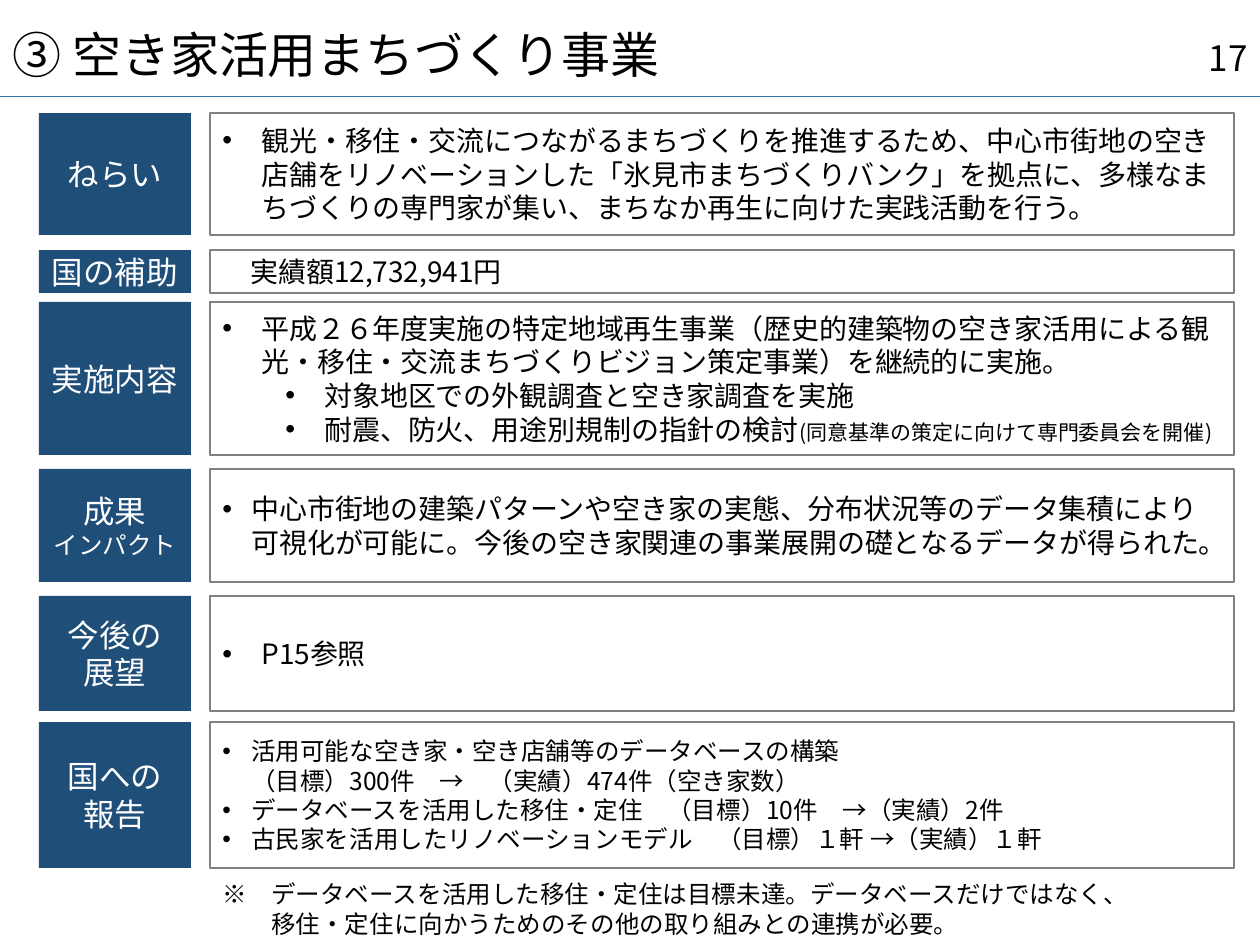
from dataclasses import dataclass

from lxml.etree import SubElement
from pptx import Presentation
from pptx.dml.color import RGBColor
from pptx.enum.shapes import MSO_CONNECTOR, MSO_SHAPE
from pptx.enum.text import MSO_ANCHOR, PP_ALIGN
from pptx.oxml.ns import qn
from pptx.util import Pt


@dataclass(frozen=True)
class Theme:
    face: str = "Noto Sans CJK JP"
    ink: str = "000000"
    paper: str = "FFFFFF"
    navy: str = "1F4E79"
    gray: str = "808080"
    blue: str = "2E75B6"
    title: int = 28
    page: int = 20
    label: int = 18
    body: int = 16
    small: int = 14
    tiny: int = 12


@dataclass(frozen=True)
class Para:
    text: str
    size: int
    left: int = 0
    hang: int = 0
    level: int = 0
    mark: bool = True
    tail: str = ""


def emu(px):
    return round(px * 914400 / 126)


def color(code):
    return RGBColor.from_string(code)


class Deck:
    def __init__(self, theme):
        self.theme = theme
        self.deck = Presentation()
        self.deck.slide_width = emu(1260)
        self.deck.slide_height = emu(945)
        self.slide = self.deck.slides.add_slide(self.deck.slide_layouts[6])

    def fill_in(self, frame, paras, ink, align=PP_ALIGN.LEFT, anchor=MSO_ANCHOR.MIDDLE):
        frame.word_wrap = True
        frame.vertical_anchor = anchor
        for index, para in enumerate(paras):
            line = frame.paragraphs[0] if index == 0 else frame.add_paragraph()
            line.text = para.text
            line.alignment = align
            line.level = para.level
            props = line._p.get_or_add_pPr()
            props.set("marL", str(emu(para.left)))
            props.set("indent", str(-emu(para.hang)))
            if para.hang and para.mark:
                SubElement(props, qn("a:buFont"), typeface="Arial")
                SubElement(props, qn("a:buChar"), char="•")
            line.font.size = Pt(para.size)
            line.font.name = self.theme.face
            line.font.color.rgb = color(ink)
            SubElement(props.find(qn("a:defRPr")), qn("a:ea"), typeface=self.theme.face)
            if para.tail:
                run = line.add_run()
                run.text = para.tail
                run.font.size = Pt(self.theme.tiny)
        return frame

    def text(self, area, para, **style):
        box = self.slide.shapes.add_textbox(*map(emu, area))
        return self.fill_in(box.text_frame, [para], self.theme.ink, **style)

    def box(self, area, paras, fill, ink, edge=None, **style):
        shape = self.slide.shapes.add_shape(MSO_SHAPE.RECTANGLE, *map(emu, area))
        shape.shadow.inherit = False
        shape.fill.solid()
        shape.fill.fore_color.rgb = color(fill)
        if edge:
            shape.line.color.rgb = color(edge)
            shape.line.width = Pt(1)
        else:
            shape.line.fill.background()
        self.fill_in(shape.text_frame, paras, ink, **style)

    def rule(self, top):
        line = self.slide.shapes.add_connector(
            MSO_CONNECTOR.STRAIGHT, 0, emu(top), emu(1260), emu(top))
        line.line.color.rgb = color(self.theme.blue)
        line.line.width = Pt(0.5)
        SubElement(line._element.spPr, qn("a:effectLst"))

    def row(self, top, height, label, body):
        theme = self.theme
        self.box((39, top, 152, height), label, theme.navy, theme.paper,
                 align=PP_ALIGN.CENTER)
        self.box((210, top, 1024, height), body, theme.paper, theme.ink, theme.gray)


def main():
    theme = Theme()
    deck = Deck(theme)

    def label(text):
        return Para(text, theme.label)

    def wide(text):
        return Para(text, theme.body, 39, 39)

    def sub(text, tail=""):
        return Para(text, theme.body, 102, 39, 1, tail=tail)

    def near(text, size):
        return Para(text, size, 29, 29)

    deck.rule(96)
    title = deck.text((0, 39, 1260, 37), Para("③ 空き家活用まちづくり事業", theme.title))
    title.paragraphs[0].line_spacing = 0.9
    deck.text((976, 33, 284, 50), Para("17", theme.page), align=PP_ALIGN.RIGHT)

    rows = [
        (113, 122, [label("ねらい")], [
            wide("観光・移住・交流につながるまちづくりを推進するため、中心市街地の空き"
                 "店舗をリノベーションした「氷見市まちづくりバンク」を拠点に、多様なま"
                 "ちづくりの専門家が集い、まちなか再生に向けた実践活動を行う。")]),
        (250, 43, [label("国の補助")], [Para("実績額12,732,941円", theme.body, 28)]),
        (302, 153, [label("実施内容")], [
            wide("平成２６年度実施の特定地域再生事業（歴史的建築物の空き家活用による観"
                 "光・移住・交流まちづくりビジョン策定事業）を継続的に実施。"),
            sub("対象地区での外観調査と空き家調査を実施"),
            sub("耐震、防火、用途別規制の指針の検討",
                "(同意基準の策定に向けて専門委員会を開催)")]),
        (469, 113, [label("成果"), Para("インパクト", theme.small)], [
            near("中心市街地の建築パターンや空き家の実態、分布状況等のデータ集積により"
                 "可視化が可能に。今後の空き家関連の事業展開の礎となるデータが得られた。",
                 theme.body)]),
        (596, 115, [label("今後の"), label("展望")], [wide("P15参照")]),
        (722, 146, [label("国への\n報告")], [
            near("活用可能な空き家・空き店舗等のデータベースの構築\n"
                 "（目標）300件　→　（実績）474件（空き家数）", theme.small),
            near("データベースを活用した移住・定住　（目標）10件　→（実績）2件", theme.small),
            near("古民家を活用したリノベーションモデル　（目標）１軒 →（実績）１軒",
                 theme.small)]),
    ]
    for row in rows:
        deck.row(*row)

    note = ("※\tデータベースを活用した移住・定住は目標未達。データベースだけではなく、\n"
            "移住・定住に向かうためのその他の取り組みとの連携が必要。")
    deck.text((210, 873, 1002, 72), Para(note, theme.small, 49, 49, mark=False),
              anchor=MSO_ANCHOR.TOP)
    deck.deck.save("out.pptx")


if __name__ == "__main__":
    main()
